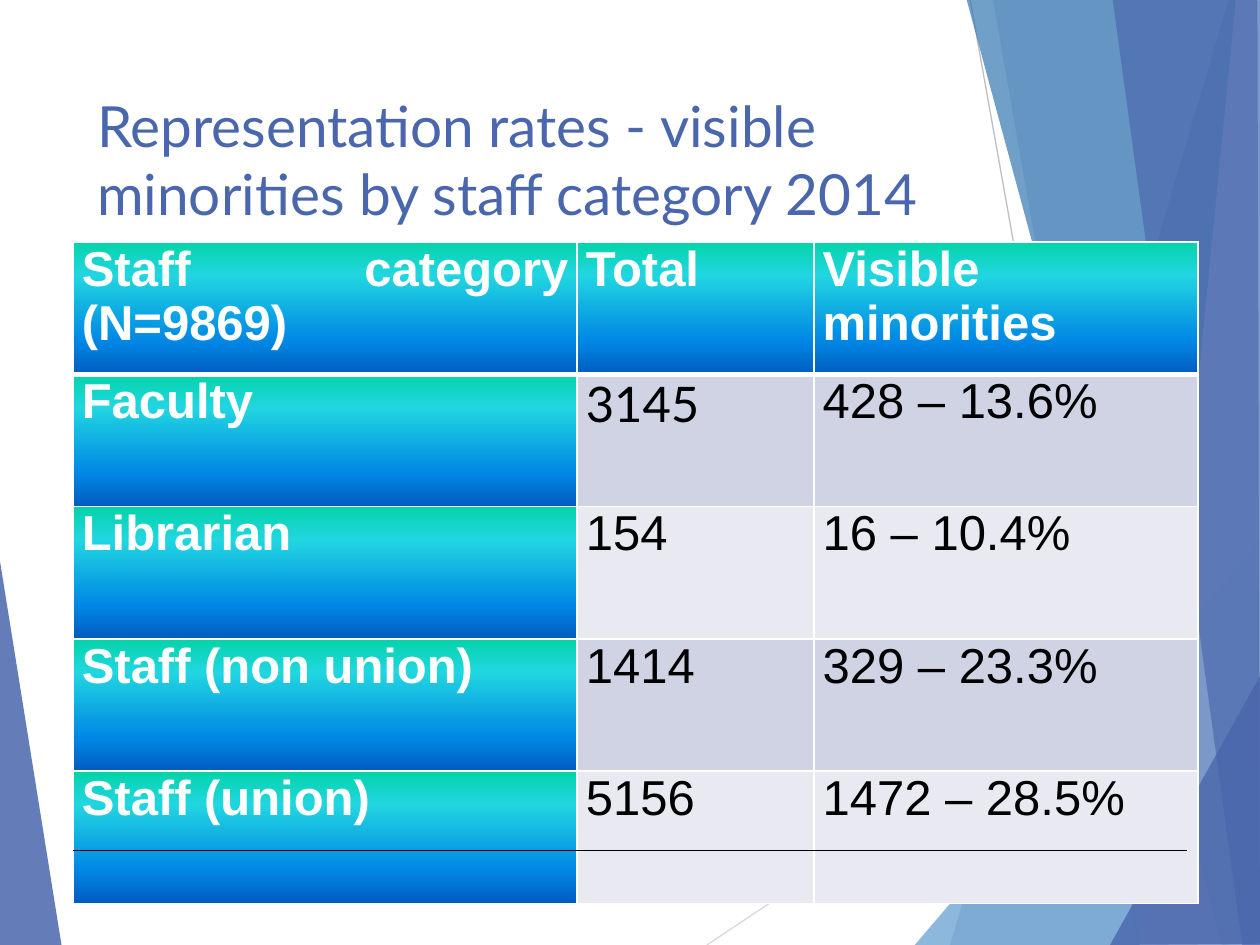
from dataclasses import dataclass

from lxml.etree import SubElement
from pptx import Presentation
from pptx.dml.color import RGBColor
from pptx.enum.shapes import MSO_CONNECTOR
from pptx.enum.text import MSO_ANCHOR, PP_ALIGN
from pptx.oxml.ns import qn
from pptx.util import Inches, Pt


@dataclass(frozen=True)
class Theme:
    heading_font: str = "Lato"
    body_font: str = "Arial"
    title_size: float = 32.4
    table_size: float = 28
    line_width: float = 0.75
    border_width: float = 1
    header_border: float = 3
    navy: str = "4A66AC"
    sky: str = "629DD1"
    steel: str = "3477B2"
    lilac: str = "90A2CF"
    white: str = "FFFFFF"
    black: str = "000000"
    light_gray: str = "D9D9D9"
    gray: str = "BFBFBF"
    bands: tuple = ("D0D3E3", "E9EAF1")
    gradient: tuple = ((0, "03D4A8"), (25, "21D6E0"), (75, "0087E6"), (100, "005CBF"))


class SlideBuilder:
    def __init__(self, prs, theme):
        self.theme = theme
        self.s = prs.slides.add_slide(prs.slide_layouts[5])

    def run(self, p, text, font, size, color, bold=False):
        r = p.add_run()
        r.text = text
        r.font.name = font
        r.font.size = Pt(size)
        r.font.bold = bold
        r.font.color.rgb = RGBColor.from_string(color)

    def title(self, text, left, top, width, height):
        sp = self.s.shapes.title
        sp.left, sp.top = Inches(left), Inches(top)
        sp.width, sp.height = Inches(width), Inches(height)
        self.s.shapes._spTree.append(sp._element)
        tf = sp.text_frame
        tf.word_wrap = True
        tf.vertical_anchor = MSO_ANCHOR.TOP
        p = tf.paragraphs[0]
        p.alignment = PP_ALIGN.LEFT
        self.run(p, text, self.theme.heading_font, self.theme.title_size, self.theme.navy)

    def facet(self, points, color, opacity):
        start, *rest = [(Inches(x), Inches(y)) for x, y in points]
        fb = self.s.shapes.build_freeform(*start)
        fb.add_line_segments(rest, close=True)
        sp = fb.convert_to_shape()
        sp.shadow.inherit = False
        sp.line.fill.background()
        sp.fill.solid()
        sp.fill.fore_color.rgb = RGBColor.from_string(color)
        clr = sp._element.spPr.find(qn("a:solidFill"))[0]
        SubElement(clr, qn("a:alpha"), val=str(opacity * 1000))

    def line(self, start, end, color):
        points = [Inches(v) for v in (*start, *end)]
        cxn = self.s.shapes.add_connector(MSO_CONNECTOR.STRAIGHT, *points)
        cxn.line.width = Pt(self.theme.line_width)
        cxn.line.color.rgb = RGBColor.from_string(color)
        SubElement(cxn._element.spPr, qn("a:effectLst"))

    def borders(self, cell, row):
        tcPr = cell._tc.get_or_add_tcPr()
        for side in "LRTB":
            heavy = (row, side) in ((0, "B"), (1, "T"))
            width = self.theme.header_border if heavy else self.theme.border_width
            ln = SubElement(tcPr, qn(f"a:ln{side}"), w=str(Pt(width)))
            fill = SubElement(ln, qn("a:solidFill"))
            SubElement(fill, qn("a:srgbClr"), val=self.theme.white)

    def gradient_fill(self, cell):
        grad = SubElement(cell._tc.get_or_add_tcPr(), qn("a:gradFill"), rotWithShape="1")
        stops = SubElement(grad, qn("a:gsLst"))
        for pos, color in self.theme.gradient:
            gs = SubElement(stops, qn("a:gs"), pos=str(pos * 1000))
            SubElement(gs, qn("a:srgbClr"), val=color)
        SubElement(grad, qn("a:lin"), ang="5400000", scaled="0")

    def cell(self, cell, text, row, col, font):
        t = self.theme
        heading = row == 0 or col == 0
        cell.margin_left = cell.margin_right = Inches(0.07)
        cell.margin_top = cell.margin_bottom = 0
        cell.vertical_anchor = MSO_ANCHOR.TOP
        self.borders(cell, row)
        if heading:
            self.gradient_fill(cell)
        else:
            cell.fill.solid()
            cell.fill.fore_color.rgb = RGBColor.from_string(t.bands[(row - 1) % 2])
        p = cell.text_frame.paragraphs[0]
        p.alignment = PP_ALIGN.JUSTIFY
        self.run(p, text, font, t.table_size, t.white if heading else t.black, heading)

    def table(self, rows, left, top, widths, row_height, heading_font_cells):
        size = Inches(sum(widths)), Inches(row_height * len(rows))
        frame = self.s.shapes.add_table(len(rows), len(widths), Inches(left), Inches(top), *size)
        tbl = frame.table
        for column, width in zip(tbl.columns, widths):
            column.width = Inches(width)
        for i, values in enumerate(rows):
            tbl.rows[i].height = Inches(row_height)
            for j, text in enumerate(values):
                special = (i, j) in heading_font_cells
                font = self.theme.heading_font if special else self.theme.body_font
                self.cell(tbl.cell(i, j), text, i, j, font)


def main():
    prs = Presentation()
    prs.slide_width, prs.slide_height = Inches(10), Inches(7.5)
    t = Theme()
    b = SlideBuilder(prs, t)

    b.facet([(-0.01, 4.39), (0.49, 7.51), (-0.01, 7.5)], t.navy, 85)
    b.line((5.61, 7.5), (10.01, 4.57), t.light_gray)
    b.line((7.7, 0), (9.04, 7.5), t.gray)
    right_facets = [
        ([(9.75, 0), (7.54, 7.5), (10.02, 7.51), (10.01, 0.01)], t.navy, 30),
        ([(7.88, -0.01), (9.19, 7.5), (10.01, 7.5), (10.01, -0.01)], t.navy, 20),
        ([(7.26, 7.5), (10, 4.29), (10.01, 7.5)], t.sky, 72),
        ([(7.67, -0.01), (9.7, 7.5), (10.01, 7.49), (10.01, -0.01)], t.steel, 70),
        ([(9.81, -0.01), (9.07, 7.5), (10.01, 7.5), (10, -0.01)], t.lilac, 70),
        ([(8.83, -0.01), (9.86, 7.5), (10, 7.5), (9.98, -0.01)], t.navy, 65),
        ([(8.81, 7.5), (10.01, 5.35), (10.01, 7.49)], t.navy, 80),
    ]
    for points, color, opacity in right_facets:
        b.facet(points, color, opacity)

    b.title("Representation rates - visible minorities by staff category 2014",
            0.67, 0.67, 6.94, 1.44)
    rows = [
        ("Staff category (N=9869)", "Total", "Visible minorities"),
        ("Faculty", "3145", "428 – 13.6%"),
        ("Librarian", "154", "16 – 10.4%"),
        ("Staff (non union)", "1414", "329 – 23.3%"),
        ("Staff (union)", "5156", "1472 – 28.5%"),
    ]
    b.table(rows, 0.58, 1.92, (4, 1.88, 3.05), 1.05, {(1, 1)})
    b.line((0.58, 6.75), (9.42, 6.75), t.black)
    prs.save("out.pptx")


if __name__ == "__main__":
    main()
